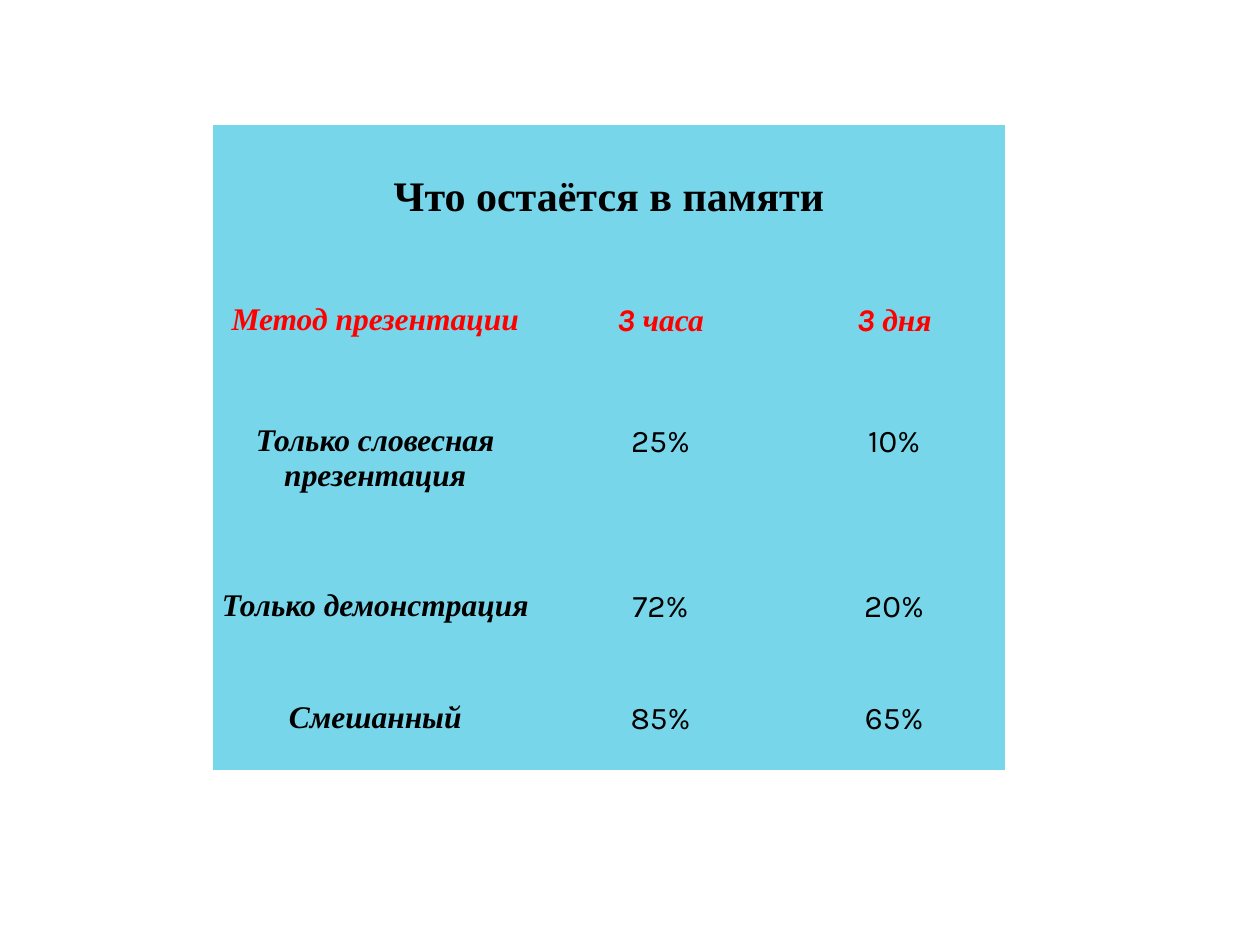
from pptx import Presentation, util as u
from pptx.dml.color import RGBColor
from pptx.enum import text
from pptx.oxml import ns

COLORS = {"cell": "78D6EA", "heading": "FF0000", "body": "000000"}
SERIF, SANS = "Times New Roman", "Karla"
PLAIN_STYLE = "{2D5ABB26-0587-4C30-8999-92F81FD0307C}"
TITLE = "Что остаётся в памяти"
HEADINGS = [
    [("Метод презентации", SERIF)],
    [("3", SANS), (" часа", SERIF)],
    [("3", SANS), (" дня", SERIF)],
]
RESULTS = [
    ("Только словесная презентация", "25%", "10%"),
    ("Только демонстрация", "72%", "20%"),
    ("Смешанный", "85%", "65%"),
]
COLUMN_WIDTHS = [6.55, 4.95, 4.47]
ROW_HEIGHTS = [3.53, 2.44, 3.33, 2.26, 1.45]


def write_cell(cell, parts, color="body", size=18, bold=True, italic=True):
    para = cell.text_frame.paragraphs[0]
    para.alignment = text.PP_ALIGN.CENTER
    para.font.size = u.Pt(size)
    for words, typeface in parts:
        span = para.add_run()
        span.text = words
        span.font.name = typeface
        span.font.size = u.Pt(size)
        span.font.bold = bold
        span.font.italic = italic
        span.font.color.rgb = RGBColor.from_string(COLORS[color])


def add_memory_table(page, left, top):
    frame = page.shapes.add_table(
        len(ROW_HEIGHTS), len(COLUMN_WIDTHS), u.Cm(left), u.Cm(top),
        u.Cm(sum(COLUMN_WIDTHS)), u.Cm(sum(ROW_HEIGHTS)))
    table = frame.table
    table.first_row = table.horz_banding = False
    next(frame.element.iter(ns.qn("a:tableStyleId"))).text = PLAIN_STYLE
    for column, width in zip(table.columns, COLUMN_WIDTHS):
        column.width = u.Cm(width)
    for row, height in zip(table.rows, ROW_HEIGHTS):
        row.height = u.Cm(height)
    for cell in table.iter_cells():
        cell.fill.solid()
        cell.fill.fore_color.rgb = RGBColor.from_string(COLORS["cell"])
        cell.margin_left = cell.margin_right = u.Cm(0.05)
        cell.margin_top = cell.margin_bottom = u.Cm(0.05)

    title_cell = table.cell(0, 0)
    title_cell.merge(table.cell(0, len(COLUMN_WIDTHS) - 1))
    title_cell.margin_top = u.Cm(1)
    write_cell(title_cell, [(TITLE, SERIF)], size=24, italic=False)
    for column, parts in enumerate(HEADINGS):
        write_cell(table.cell(1, column), parts, "heading")
    for row, (method, *shares) in enumerate(RESULTS, 2):
        write_cell(table.cell(row, 0), [(method, SERIF)])
        for column, share in enumerate(shares, 1):
            write_cell(table.cell(row, column), [(share, SANS)],
                       bold=False, italic=False)


def main():
    deck = Presentation()
    deck.slide_width, deck.slide_height = u.Cm(25.4), u.Cm(19.05)
    page = deck.slides.add_slide(deck.slide_layouts.get_by_name("Blank"))
    add_memory_table(page, 4.29, 2.51)
    deck.save("out.pptx")


if __name__ == "__main__":
    main()
